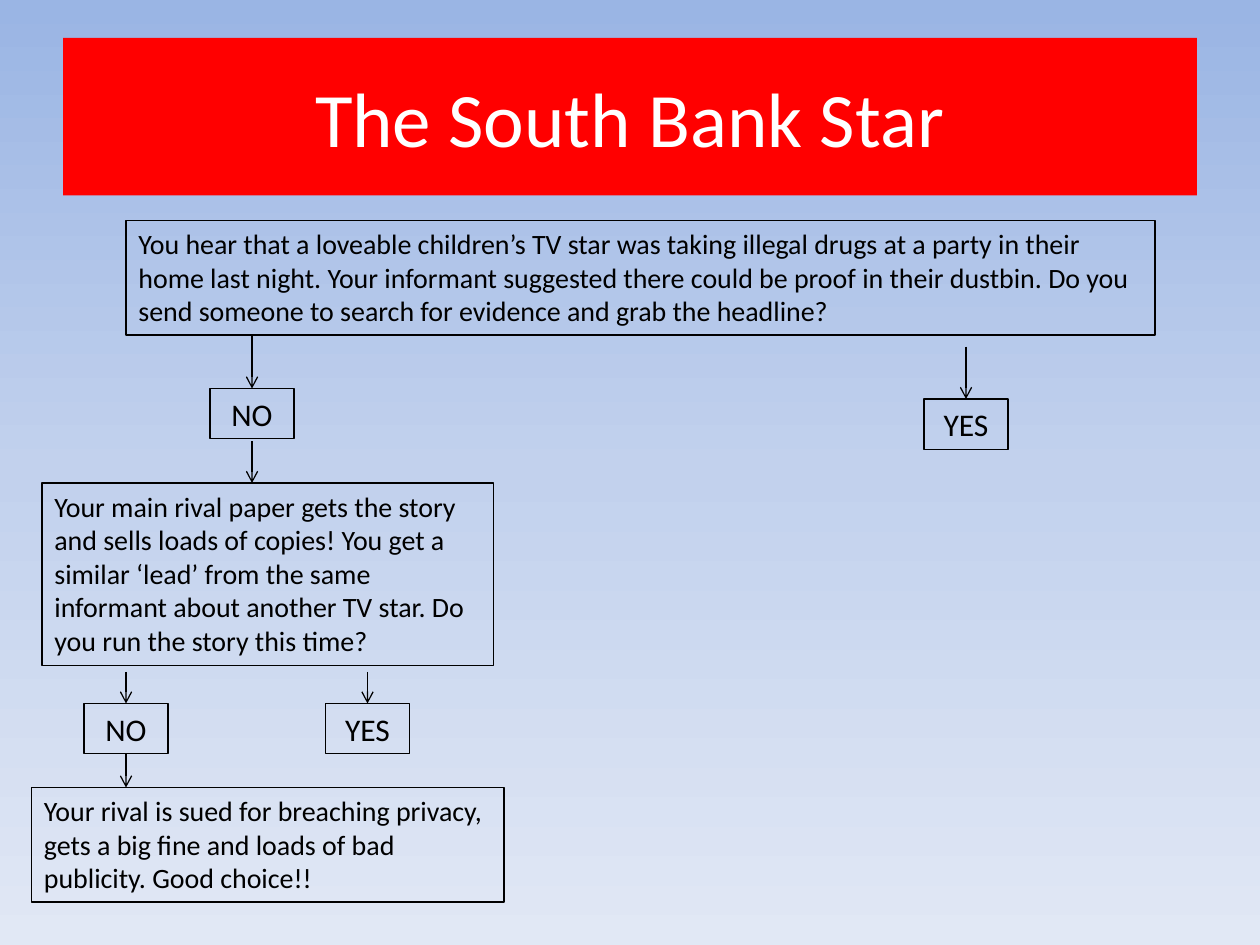
import copy
from dataclasses import dataclass

import lxml.etree
import pptx
import pptx.dml.color
import pptx.enum.shapes
import pptx.enum.text
import pptx.oxml.ns
import pptx.util

COLUMNS, ROWS = 120, 90
FONT = "Calibri"
BLACK, WHITE, RED = "000000", "FFFFFF", "FF0000"
SKY = ((0, "9AB5E4"), (0.5, "C2D1ED"), (1, "E1E8F5"))
LEFT, CENTER = pptx.enum.text.PP_ALIGN.LEFT, pptx.enum.text.PP_ALIGN.CENTER
TOP_SIDE, BOTTOM_SIDE = 0, 2

presentation = pptx.Presentation()
presentation.slide_width = pptx.util.Inches(10)
presentation.slide_height = pptx.util.Inches(7.5)


@dataclass(frozen=True)
class Step:
    text: str
    column: float
    row: float
    columns: float
    rows: float
    size: int = 16
    align: pptx.enum.text.PP_ALIGN = LEFT


@dataclass(frozen=True)
class Arrow:
    column: float
    start_row: float
    end_row: float
    source: str = ""
    target: str = ""


def across(columns: float) -> int:
    return round(presentation.slide_width * columns / COLUMNS)


def down(rows: float) -> int:
    return round(presentation.slide_height * rows / ROWS)


def color(value: str) -> pptx.dml.color.RGBColor:
    return pptx.dml.color.RGBColor.from_string(value)


def answer(text: str, column: float, row: float) -> Step:
    return Step(text, column, row, 8, 4.8, size=18, align=CENTER)


def write(frame, text: str, *, size: int, ink: str = BLACK, align=LEFT,
          anchor=pptx.enum.text.MSO_ANCHOR.TOP) -> None:
    frame.word_wrap = True
    frame.vertical_anchor = anchor
    paragraph = frame.paragraphs[0]
    paragraph.alignment = align
    run = paragraph.add_run()
    run.text = text
    run.font.name = FONT
    run.font.size = pptx.util.Pt(size)
    run.font.color.rgb = color(ink)


def outline(line) -> None:
    line.color.rgb = color(BLACK)
    line.width = pptx.util.Pt(0.75)


def paint_background(slide) -> None:
    fill = slide.background.fill
    fill.gradient()
    fill.gradient_angle = 270
    stop_list = slide.element.xpath(".//a:gsLst")[0]
    stop_list.append(copy.deepcopy(stop_list[-1]))
    for stop, (position, value) in zip(fill.gradient_stops, SKY):
        stop.position = position
        stop.color.rgb = color(value)


def draw_title(slide, text: str) -> None:
    title = slide.shapes.title
    title.left, title.top = across(6), down(3.6)
    title.width, title.height = across(108), down(15)
    title.fill.solid()
    title.fill.fore_color.rgb = color(RED)
    write(title.text_frame, text, size=44, ink=WHITE, align=CENTER,
          anchor=pptx.enum.text.MSO_ANCHOR.MIDDLE)


def draw_step(slide, step: Step):
    box = slide.shapes.add_textbox(across(step.column), down(step.row),
                                   across(step.columns), down(step.rows))
    outline(box.line)
    write(box.text_frame, step.text, size=step.size, align=step.align)
    box.text_frame.auto_size = pptx.enum.text.MSO_AUTO_SIZE.SHAPE_TO_FIT_TEXT
    return box


def draw_arrow(slide, arrow: Arrow, boxes: dict) -> None:
    line = slide.shapes.add_connector(
        pptx.enum.shapes.MSO_CONNECTOR.STRAIGHT,
        across(arrow.column), down(arrow.start_row),
        across(arrow.column), down(arrow.end_row))
    if arrow.source:
        line.begin_connect(boxes[arrow.source], BOTTOM_SIDE)
    if arrow.target:
        line.end_connect(boxes[arrow.target], TOP_SIDE)
    outline(line.line)
    lxml.etree.SubElement(line.line._get_or_add_ln(),
                          pptx.oxml.ns.qn("a:tailEnd"), type="arrow")
    lxml.etree.SubElement(line.element.spPr, pptx.oxml.ns.qn("a:effectLst"))


STEPS = {
    "tip-off": Step(
        "You hear that a loveable children’s TV star was taking illegal drugs "
        "at a party in their home last night. Your informant suggested there "
        "could be proof in their dustbin. Do you send someone to search for "
        "evidence and grab the headline?", 12, 21, 98, 10.9),
    "skip search": answer("NO", 20, 37),
    "search": answer("YES", 88, 38),
    "second lead": Step(
        "Your main rival paper gets the story and sells loads of copies! You "
        "get a similar ‘lead’ from the same informant about another TV star. "
        "Do you run the story this time?", 4, 46, 43, 17.4),
    "hold story": answer("NO", 8, 67),
    "run story": answer("YES", 31, 67),
    "rival sued": Step(
        "Your rival is sued for breaching privacy, gets a big fine and loads "
        "of bad publicity. Good choice!!", 3, 75, 45, 10.9),
}

ARROWS = (
    Arrow(24, 32, 37, target="skip search"),
    Arrow(92, 33, 38, target="search"),
    Arrow(24, 42, 46),
    Arrow(12, 64, 67, target="hold story"),
    Arrow(35, 64, 67, target="run story"),
    Arrow(12, 71.8, 75, source="hold story"),
)


def main() -> None:
    slide = presentation.slides.add_slide(presentation.slide_layouts[5])
    paint_background(slide)
    draw_title(slide, "The South Bank Star")
    boxes = {name: draw_step(slide, step) for name, step in STEPS.items()}
    for arrow in ARROWS:
        draw_arrow(slide, arrow, boxes)
    presentation.save("out.pptx")


if __name__ == "__main__":
    main()
